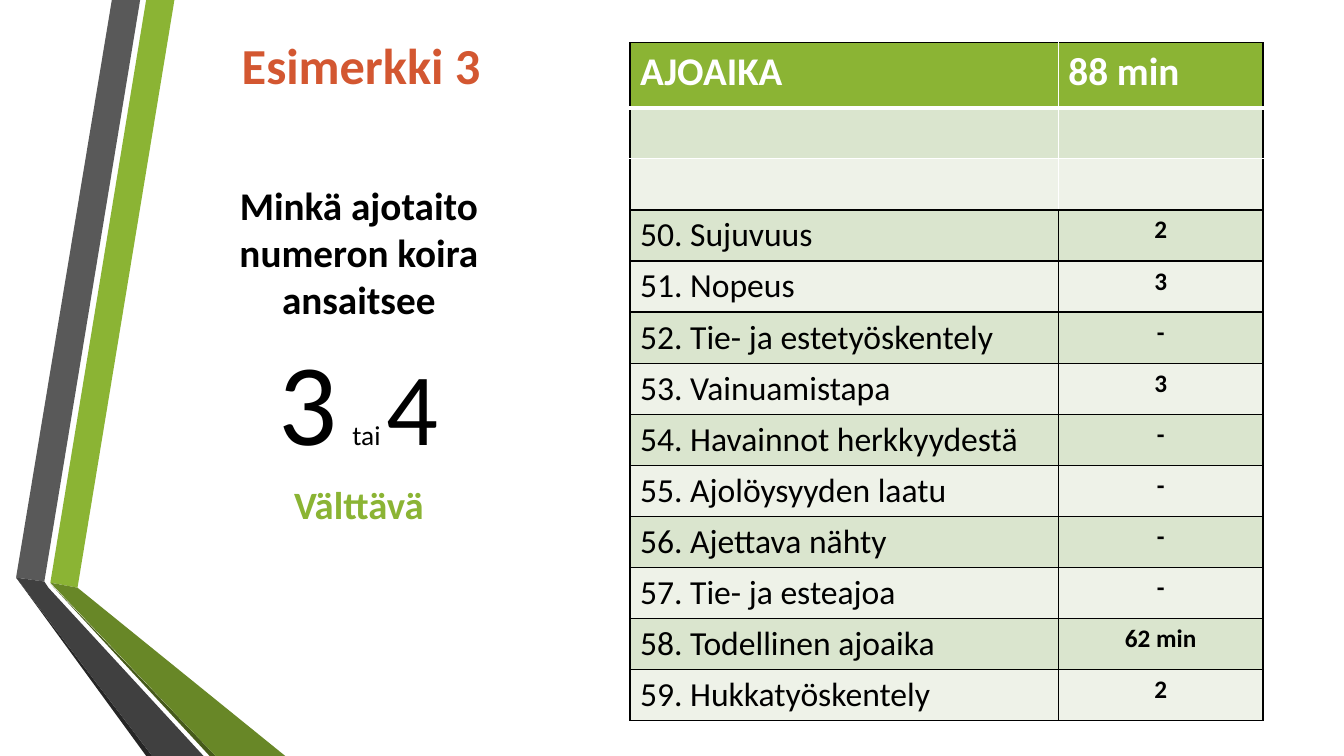
from dataclasses import dataclass

from lxml.etree import SubElement
from pptx import Presentation
from pptx.dml.color import RGBColor
from pptx.enum.text import MSO_ANCHOR, MSO_AUTO_SIZE, PP_ALIGN
from pptx.oxml.ns import qn
from pptx.util import Pt


@dataclass(frozen=True)
class Theme:
    font: str = "Calibri"
    black: str = "000000"
    white: str = "FFFFFF"
    green: str = "8BB434"
    green_dark: str = "688727"
    green_edge: str = "465A1A"
    gray: str = "595959"
    gray_dark: str = "404040"
    gray_edge: str = "262626"
    orange: str = "D35731"
    band_dark: str = "DAE5CE"
    band_light: str = "EEF2E8"
    heading: float = 36
    title: float = 28
    verdict: float = 27.6
    label: float = 24
    score: float = 18


T = Theme()


def style(run, size, color=T.black, bold=False):
    f = run.font
    f.name, f.size, f.bold = T.font, Pt(size), bold
    f.color.rgb = RGBColor.from_string(color)


def set_border(cell, side, color, width):
    """Draw one cell edge; side is L, R, T or B, called in that order."""
    ln = SubElement(cell._tc.get_or_add_tcPr(), qn(f"a:ln{side}"), w=str(Pt(width)))
    SubElement(SubElement(ln, qn("a:solidFill")), qn("a:srgbClr"), val=color)


prs = Presentation()
prs.slide_width, prs.slide_height = Pt(960), Pt(540)
s = prs.slides.add_slide(prs.slide_layouts[5])

# Folded ribbons along the left edge
ribbons = [
    (T.green, [(36, 416.2), (55.4, 419.8), (124.6, 0), (104.4, 0)]),
    (T.gray, [(100.1, 0), (79.9, 0), (11.5, 412.6), (31.7, 415.4)]),
    (T.gray_edge, [(11.5, 412.6), (104.4, 540), (108.7, 540)]),
    (T.green_edge, [(36, 416.9), (149.8, 540), (154.1, 540)]),
    (T.green_dark, [(36, 416.2), (154.1, 540), (203.8, 540), (55.4, 419.8)]),
    (T.gray_dark, [(145.4, 540), (34.6, 419.8), (31.7, 415.4), (11.5, 412.6), (108.7, 540)]),
]
for color, points in ribbons:
    start, *rest = [(Pt(x), Pt(y)) for x, y in points]
    builder = s.shapes.build_freeform(*start)
    builder.add_line_segments(rest)
    sp = builder.convert_to_shape()
    sp.shadow.inherit = False
    sp.fill.solid()
    sp.fill.fore_color.rgb = RGBColor.from_string(color)
    sp.line.fill.background()

# Question
title = s.shapes.title
title.left, title.top, title.width, title.height = Pt(116.6), Pt(126), Pt(279.4), Pt(108)
tf = title.text_frame
tf.text = "Minkä ajotaito numeron koira ansaitsee"
tf.auto_size = MSO_AUTO_SIZE.NONE
tf.vertical_anchor = MSO_ANCHOR.BOTTOM
tf.paragraphs[0].alignment = PP_ALIGN.CENTER
style(tf.paragraphs[0].runs[0], T.title, bold=True)

# Heading
tf = s.shapes.add_textbox(Pt(165.6), Pt(20.9), Pt(242.6), Pt(51)).text_frame
tf.word_wrap = True
tf.text = "Esimerkki 3"
style(tf.paragraphs[0].runs[0], T.heading, T.orange, True)

# Answer
answer = [
    [("3", 83.1, T.black, False), (" ", 45.6, T.black, False),
     ("tai ", 19.5, T.black, False), ("4", 73.2, T.black, False)],
    [("Välttävä", T.verdict, T.green, True)],
]
tf = s.shapes.add_textbox(Pt(116.6), Pt(234), Pt(279.4), Pt(144)).text_frame
tf.word_wrap = True
tf.vertical_anchor = MSO_ANCHOR.MIDDLE
tf.margin_top = tf.margin_bottom = 0
for i, runs in enumerate(answer):
    p = tf.add_paragraph() if i else tf.paragraphs[0]
    p.alignment = PP_ALIGN.CENTER
    p.space_before, p.space_after = Pt(3), Pt(6)
    for text, size, color, bold in runs:
        r = p.add_run()
        r.text = text
        style(r, size, color, bold)

# Score table
rows = [
    ("AJOAIKA", "88 min"),
    ("", ""),
    ("", ""),
    ("50. Sujuvuus", "2"),
    ("51. Nopeus", "3"),
    ("52. Tie- ja estetyöskentely", "-"),
    ("53. Vainuamistapa", "3"),
    ("54. Havainnot herkkyydestä", "-"),
    ("55. Ajolöysyyden laatu", "-"),
    ("56. Ajettava nähty", "-"),
    ("57. Tie- ja esteajoa", "-"),
    ("58. Todellinen ajoaika", "62 min"),
    ("59. Hukkatyöskentely", "2"),
]
FIRST_SCORE = 3
HEADER_H, ROW_H = 46.4, 36.5
table = s.shapes.add_table(len(rows), 2, Pt(450), Pt(30.6), Pt(452.2),
                           Pt(HEADER_H + ROW_H * (len(rows) - 1))).table
table.columns[0].width, table.columns[1].width = Pt(306), Pt(146.2)

thin_black, thin_white = (T.black, 1), (T.white, 1)
h_edges = [thin_black, (T.white, 3), thin_white] + [thin_black] * (len(rows) - 2)
for i, texts in enumerate(rows):
    table.rows[i].height = Pt(ROW_H if i else HEADER_H)
    middle = thin_white if i < FIRST_SCORE else thin_black
    v_edges = [thin_black, middle, thin_black]
    band = T.band_dark if i % 2 else T.band_light
    for j, text in enumerate(texts):
        cell = table.cell(i, j)
        edges = (v_edges[j], v_edges[j + 1], h_edges[i], h_edges[i + 1])
        for side, edge in zip("LRTB", edges):
            set_border(cell, side, *edge)
        cell.fill.solid()
        cell.fill.fore_color.rgb = RGBColor.from_string(band if i else T.green)
        if not text:
            continue
        cell.text_frame.text = text
        p = cell.text_frame.paragraphs[0]
        if i == 0:
            style(p.runs[0], T.title, T.white, True)
        elif j == 0:
            style(p.runs[0], T.label)
        else:
            p.alignment = PP_ALIGN.CENTER
            style(p.runs[0], T.score, bold=True)

prs.save("out.pptx")
